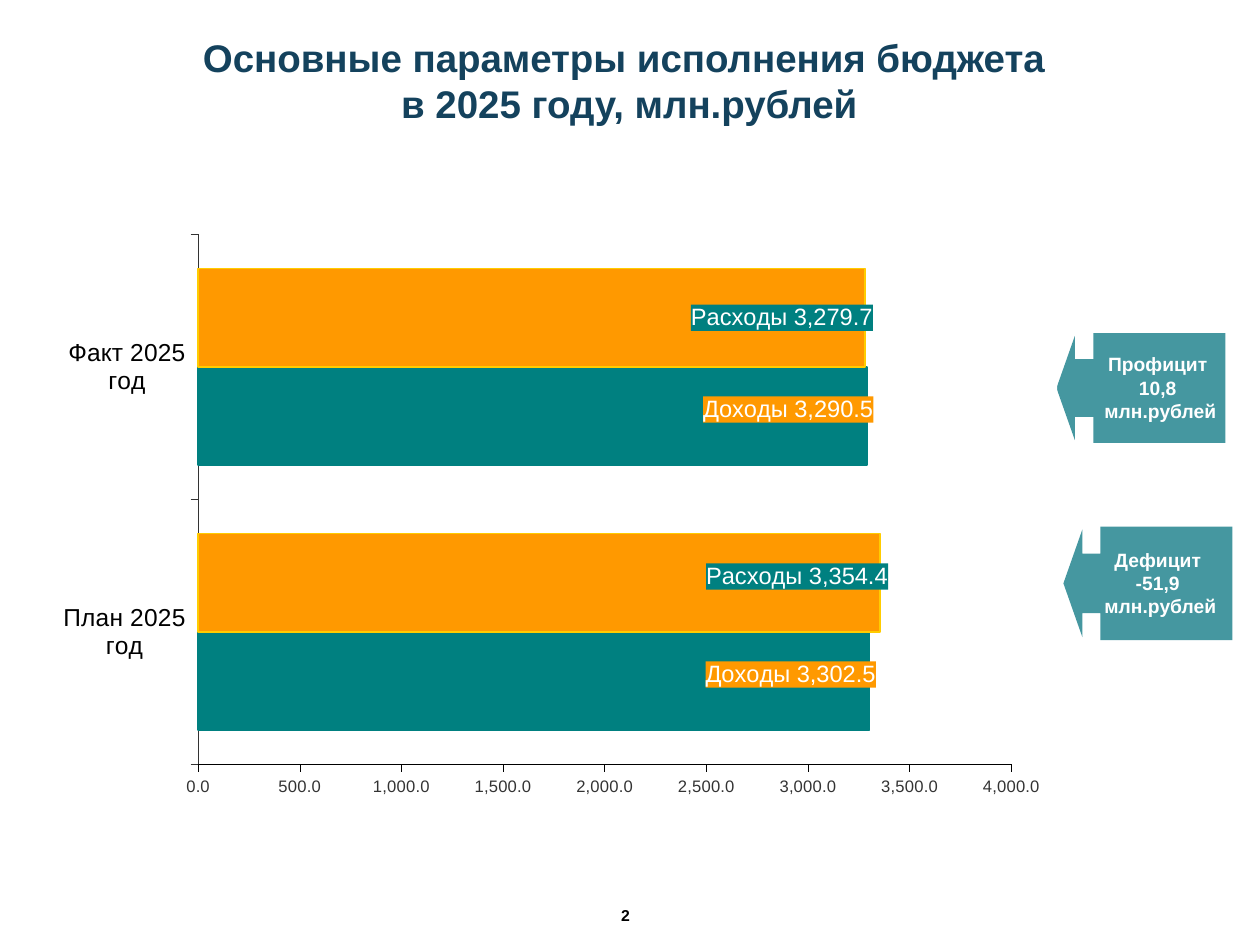
from dataclasses import dataclass

from pptx import Presentation
from pptx.chart.data import CategoryChartData
from pptx.dml.color import RGBColor
from pptx.enum import chart as ce, shapes, text
from pptx.oxml import parse_xml
from pptx.oxml.ns import nsdecls
from pptx.util import Inches, Pt

NAVY = RGBColor(0x14, 0x42, 0x5D)
TEAL = RGBColor(0x00, 0x80, 0x80)
ORANGE = RGBColor(0xFF, 0x99, 0x00)
YELLOW = RGBColor(0xFF, 0xCC, 0x00)
AQUA = RGBColor(0x45, 0x97, 0xA0)
GREY = RGBColor(0x33, 0x33, 0x33)
BLACK = RGBColor(0, 0, 0)
WHITE = RGBColor(0xFF, 0xFF, 0xFF)
FONT = "Arial"
NUMBER = "#,##0.0"
NS = nsdecls("c", "a")


@dataclass
class Label:
    lines: list[str]
    box: tuple[float, float, float, float]
    size: float
    color: RGBColor
    anchor: text.MSO_ANCHOR = text.MSO_ANCHOR.TOP


@dataclass
class Arrow:
    box: tuple[float, float, float, float]


@dataclass
class Bars:
    name: str
    vals: tuple[float, float]
    fill: RGBColor
    line: RGBColor
    back: RGBColor
    shifts: list[tuple[float, float]]


def apply(obj, **vals) -> None:
    for key, val in vals.items():
        setattr(obj, key, val)


def style(font, size: float, color: RGBColor, bold: bool = False) -> None:
    apply(font, name=FONT, size=Pt(size), bold=bold)
    font.color.rgb = color


def stroke(line, color: RGBColor, width: float) -> None:
    line.color.rgb = color
    line.width = Pt(width)


def add_label(slide, item: Label) -> None:
    frame = slide.shapes.add_textbox(*map(Inches, item.box)).text_frame
    apply(frame, word_wrap=True, vertical_anchor=item.anchor)
    for num, line in enumerate(item.lines):
        para = frame.add_paragraph() if num else frame.paragraphs[0]
        apply(para, text=line, alignment=text.PP_ALIGN.CENTER)
        for run in para.runs:
            style(run.font, item.size, item.color, True)


def add_arrow(slide, item: Arrow) -> None:
    kind = shapes.MSO_SHAPE.DOWN_ARROW_CALLOUT
    shape = slide.shapes.add_shape(kind, *map(Inches, item.box))
    shape.rotation = 90
    shape.shadow.inherit = False
    for num, val in enumerate((0.525, 0.475, 0.167, 0.782)):
        shape.adjustments[num] = val
    shape.fill.solid()
    shape.fill.fore_color.rgb = AQUA
    shape.line.fill.background()


def point_xml(idx: int, shift: tuple[float, float], back: RGBColor):
    """Label of one bar: moved, on a filled ground."""
    x, y = shift
    return parse_xml(
        f'<c:dLbl {NS}><c:idx val="{idx}"/><c:layout><c:manualLayout>'
        f'<c:x val="{x}"/><c:y val="{y}"/></c:manualLayout></c:layout>'
        f'<c:numFmt formatCode="{NUMBER}" sourceLinked="0"/>'
        f'<c:spPr><a:solidFill><a:srgbClr val="{back}"/></a:solidFill></c:spPr>'
        '<c:txPr><a:bodyPr/><a:p><a:pPr><a:defRPr sz="1350" b="0">'
        f'<a:solidFill><a:srgbClr val="{WHITE}"/></a:solidFill>'
        f'<a:latin typeface="{FONT}"/></a:defRPr></a:pPr>'
        '<a:endParaRPr/></a:p></c:txPr><c:dLblPos val="outEnd"/>'
        '<c:showLegendKey val="0"/><c:showVal val="1"/><c:showCatName val="0"/>'
        '<c:showSerName val="1"/><c:showPercent val="0"/>'
        '<c:showBubbleSize val="0"/><c:separator> </c:separator></c:dLbl>')


def style_bars(series, item: Bars) -> None:
    series.format.fill.solid()
    series.format.fill.fore_color.rgb = item.fill
    stroke(series.format.line, item.line, 1)
    series.invert_if_negative = False
    labels = series.data_labels
    apply(labels, show_value=True, show_series_name=True, number_format=NUMBER,
          number_format_is_linked=False)
    style(labels.font, 13.5, WHITE)
    for idx, shift in enumerate(item.shifts):
        labels._element.insert(idx, point_xml(idx, shift, item.back))


def place_plot(chart) -> None:
    """Fix the inner plot area and the ground of the chart."""
    plot = chart._chartSpace.chart.plotArea
    for old in plot.xpath("c:layout"):
        plot.remove(old)
    sizes = "".join(f'<c:{key} val="{val}"/>' for key, val in
                    dict(x=0.136, y=0.022, w=0.818, h=0.85).items())
    plot.insert(0, parse_xml(
        f'<c:layout {NS}><c:manualLayout><c:layoutTarget val="inner"/>'
        '<c:xMode val="edge"/><c:yMode val="edge"/>'
        f'{sizes}</c:manualLayout></c:layout>'))
    chart._chartSpace.chart.addnext(parse_xml(
        f'<c:spPr {NS}><a:solidFill><a:srgbClr val="{WHITE}"/></a:solidFill>'
        '<a:ln><a:noFill/></a:ln></c:spPr>'))


def add_bars(slide, cats: list[str], items: list[Bars]) -> None:
    data = CategoryChartData(number_format=NUMBER)
    data.categories = cats
    for item in items:
        data.add_series(item.name, item.vals)
    box = map(Inches, (0.5, 1.75, 7.89, 4.95))
    chart = slide.shapes.add_chart(
        ce.XL_CHART_TYPE.BAR_CLUSTERED, *box, data).chart
    apply(chart, has_legend=False, has_title=False)
    style(chart.font, 9.5, BLACK)
    apply(chart.plots[0], gap_width=70, overlap=0, vary_by_categories=False)
    for series, item in zip(chart.plots[0].series, items):
        style_bars(series, item)

    # Axes
    cat, val = chart.category_axis, chart.value_axis
    for axis, size, color, line in ((cat, 14, BLACK, GREY),
                                    (val, 9.5, GREY, BLACK)):
        apply(axis, has_major_gridlines=False,
              major_tick_mark=ce.XL_TICK_MARK.OUTSIDE,
              minor_tick_mark=ce.XL_TICK_MARK.NONE)
        style(axis.tick_labels.font, size, color)
        stroke(axis.format.line, line, 0.25)
    cat.tick_label_position = ce.XL_TICK_LABEL_POSITION.LOW
    apply(val, minimum_scale=0, maximum_scale=4000, major_unit=500)
    apply(val.tick_labels, number_format=NUMBER, number_format_is_linked=False)
    place_plot(chart)


CATS = ["План 2025 год", "Факт 2025 год"]
BARS = [
    Bars("Доходы", (3302.5, 3290.5), TEAL, TEAL, ORANGE,
         [(-0.17, -0.01), (-0.17, -0.01)]),
    Bars("Расходы", (3354.4, 3279.7), ORANGE, YELLOW, TEAL,
         [(-0.18, -0.01), (-0.18, 0)]),
]
ARROWS = [Arrow((8.66, 3.96, 0.9, 1.34)), Arrow((8.62, 2.41, 0.87, 1.34))]
MIDDLE = text.MSO_ANCHOR.MIDDLE
LABELS = [
    Label(["Основные параметры исполнения бюджета \vв 2025 году, млн.рублей"],
          (0.27, 0.36, 9.45, 0.55), 22, NAVY, MIDDLE),
    Label(["Профицит ", "10,8 ", "млн.рублей"],
          (8.64, 2.75, 1.14, 0.66), 11, WHITE),
    Label(["Дефицит ", "-51,9 ", "млн.рублей"],
          (8.64, 4.3, 1.14, 0.66), 11, WHITE),
    Label(["2"], (4.69, 7.14, 0.55, 0.25), 9, BLACK, MIDDLE),
]


def main() -> None:
    deck = Presentation()
    apply(deck, slide_width=Inches(10), slide_height=Inches(7.5))
    slide = deck.slides.add_slide(deck.slide_layouts[6])
    # Callouts, then text over them, then the chart
    for item in ARROWS:
        add_arrow(slide, item)
    for item in LABELS:
        add_label(slide, item)
    add_bars(slide, CATS, BARS)
    deck.save("out.pptx")


if __name__ == "__main__":
    main()
